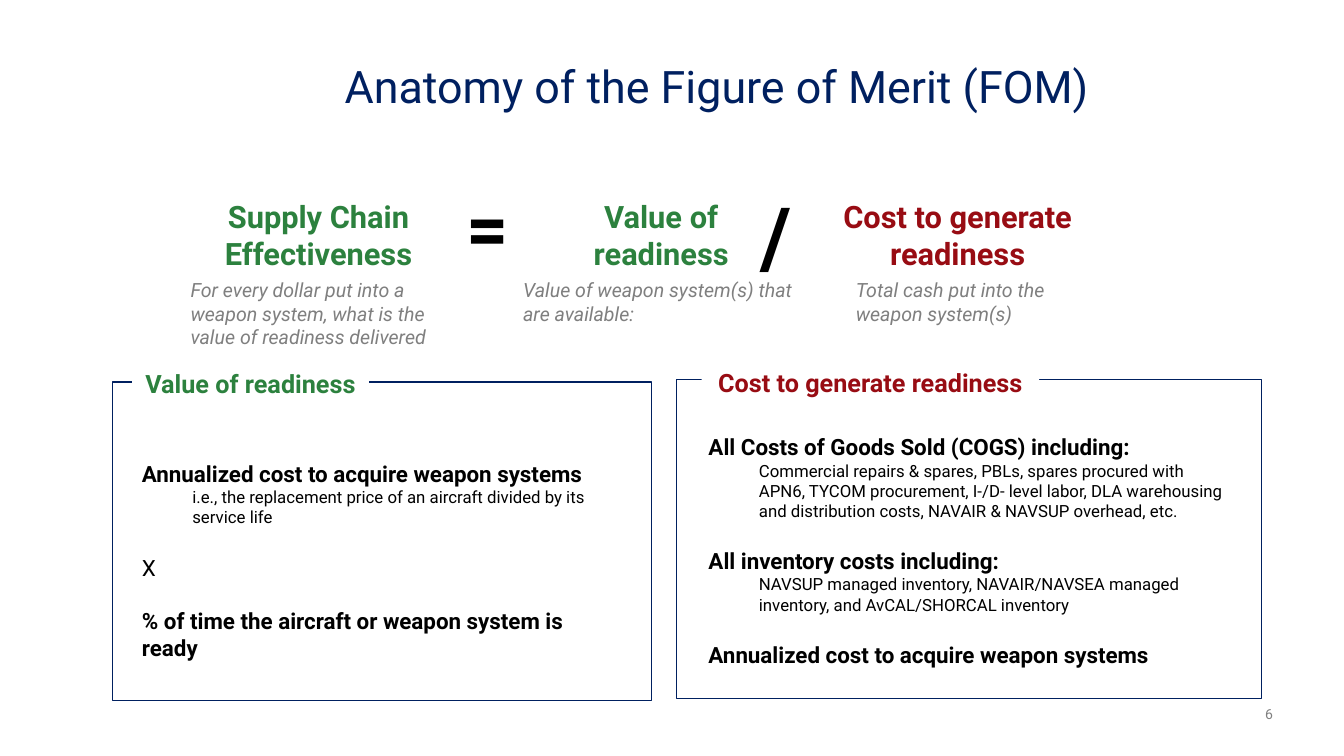
import pptx
import pptx.dml.color
import pptx.enum.shapes
import pptx.enum.text
import pptx.util

Pt = pptx.util.Pt
ALIGN = pptx.enum.text.PP_ALIGN
ANCHOR = pptx.enum.text.MSO_ANCHOR
FONT = "Roboto"
NAVY, GREEN, RED = "002060", "2C813E", "980C13"
BLACK, WHITE, GRAY, NUMBER_GRAY = "000000", "FFFFFF", "7F7F7F", "808080"
DEFAULT_INSETS = (7.2, 3.6)
FORMULA_INSETS = (7.92, 4.32)
LINE_GAP = 19


def color(value):
    return pptx.dml.color.RGBColor.from_string(value)


def add_run(paragraph, text, size, fill, bold=False, italic=False):
    run = paragraph.add_run()
    run.text = text
    run.font.name = FONT
    run.font.size = Pt(size)
    run.font.bold = bold
    run.font.italic = italic
    run.font.color.rgb = color(fill)


def add_frame(slide, box, anchor=ANCHOR.TOP, insets=DEFAULT_INSETS, wrap=True):
    frame = slide.shapes.add_textbox(*map(Pt, box)).text_frame
    frame.word_wrap = wrap
    frame.vertical_anchor = anchor
    frame.margin_left = frame.margin_right = Pt(insets[0])
    frame.margin_top = frame.margin_bottom = Pt(insets[1])
    return frame


def add_text(slide, box, text, size, fill, align=ALIGN.LEFT, bold=False, italic=False, **layout):
    paragraph = add_frame(slide, box, **layout).paragraphs[0]
    paragraph.alignment = align
    add_run(paragraph, text, size, fill, bold, italic)
    return paragraph


def add_term(slide, left, width, text, fill):
    add_text(slide, (left, 142.6, width, 50.4), text, 22, fill, ALIGN.CENTER, bold=True,
             anchor=ANCHOR.MIDDLE, insets=FORMULA_INSETS)


def add_operator(slide, box, text, size):
    add_text(slide, box, text, size, BLACK, bold=True, wrap=False)


def add_explanation(slide, left, width, text):
    add_text(slide, (left, 194.4, width, 63.4), text, 14, GRAY, italic=True, insets=FORMULA_INSETS)


def add_rectangle(slide, box, fill=None, line=None):
    shape = slide.shapes.add_shape(pptx.enum.shapes.MSO_SHAPE.RECTANGLE, *map(Pt, box))
    shape.shadow.inherit = False
    if fill:
        shape.fill.solid()
        shape.fill.fore_color.rgb = color(fill)
    else:
        shape.fill.background()
    if line:
        shape.line.color.rgb = color(line)
        shape.line.width = Pt(0.75)
    else:
        shape.line.fill.background()
    return shape


def add_panel(slide, box, label_box, label, fill):
    add_rectangle(slide, box, line=NAVY)
    frame = add_rectangle(slide, label_box, fill=WHITE).text_frame
    frame.word_wrap = False
    paragraph = frame.paragraphs[0]
    paragraph.alignment = ALIGN.CENTER
    add_run(paragraph, label, 18, fill, bold=True)


def add_items(slide, box, anchor, items):
    frame = add_frame(slide, box, anchor)
    for index, (heading, detail, bold) in enumerate(items):
        paragraph = frame.add_paragraph() if index else frame.paragraphs[0]
        if index:
            paragraph.space_before = Pt(LINE_GAP)
        add_run(paragraph, heading, 16, BLACK, bold)
        if detail:
            paragraph = frame.add_paragraph()
            paragraph.level = 1
            properties = paragraph._p.get_or_add_pPr()
            properties.set("marL", str(Pt(36)))
            properties.set("indent", "0")
            add_run(paragraph, detail, 12, BLACK)


def main():
    presentation = pptx.Presentation()
    presentation.slide_width = Pt(960)
    presentation.slide_height = Pt(540)
    slide = presentation.slides.add_slide(presentation.slide_layouts[6])

    add_text(slide, (879.1, 504, 30.2, 12.2), "6", 10, NUMBER_GRAY, ALIGN.RIGHT,
             anchor=ANCHOR.BOTTOM, insets=(0, 0))
    title = add_text(slide, (246.2, 46.1, 672.5, 34.6), "Anatomy of the Figure of Merit (FOM)",
                     32, NAVY, anchor=ANCHOR.BOTTOM, insets=(0, 0))
    title.line_spacing = 0.9

    add_term(slide, 141.1, 172.8, "Supply Chain Effectiveness", GREEN)
    add_operator(slide, (326.2, 126, 50.4, 78.5), "=", 52.8)
    add_term(slide, 390.2, 164.2, "Value of readiness", GREEN)
    add_operator(slide, (536.4, 128.2, 41.8, 87.1), "/", 59.4)
    add_term(slide, 580.3, 207.4, "Cost to generate readiness", RED)

    add_explanation(slide, 128.2, 214.6, "For every dollar put into a weapon system, "
                    "what is the value of readiness delivered")
    add_explanation(slide, 365.8, 213.8, "Value of weapon system(s) that are available:")
    add_explanation(slide, 603.4, 200.2, "Total cash put into the weapon system(s)")

    add_panel(slide, (80.6, 272.9, 384.5, 227.5), (94.3, 259.2, 169.2, 28.8),
              "Value of readiness", GREEN)
    add_items(slide, (94.3, 306, 347, 188.6), ANCHOR.MIDDLE, [
        ("Annualized cost to acquire weapon systems",
         "i.e., the replacement price of an aircraft divided by its service life", True),
        ("X", None, False),
        ("% of time the aircraft or weapon system is ready", None, True),
    ])

    add_panel(slide, (483.1, 271.4, 418.3, 227.5), (501.1, 258.5, 241.2, 28.8),
              "Cost to generate readiness", RED)
    add_items(slide, (499, 306, 383.8, 188.6), ANCHOR.TOP, [
        ("All Costs of Goods Sold (COGS) including:",
         "Commercial repairs & spares, PBLs, spares procured with APN6, TYCOM procurement, "
         "I-/D- level labor, DLA warehousing and distribution costs, "
         "NAVAIR & NAVSUP overhead, etc.", True),
        ("All inventory costs including:",
         "NAVSUP managed inventory, NAVAIR/NAVSEA managed inventory, "
         "and AvCAL/SHORCAL inventory", True),
        ("Annualized cost to acquire weapon systems", None, True),
    ])
    presentation.save("out.pptx")


if __name__ == "__main__":
    main()
